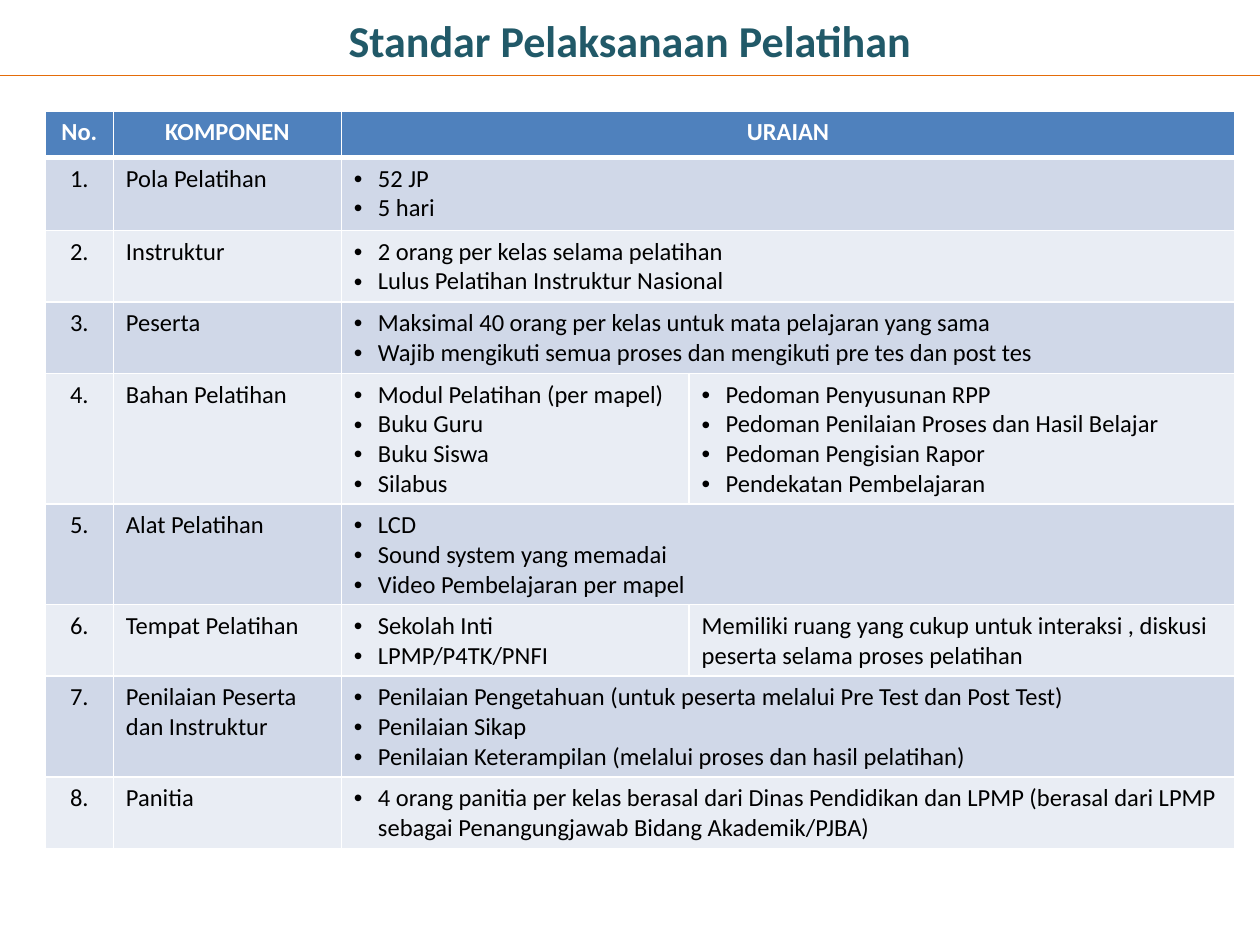
from typing import NamedTuple

from lxml import etree
from pptx import Presentation
from pptx import util as u
from pptx.dml.color import RGBColor
from pptx.enum import shapes, text
from pptx.oxml import ns

FONT = "Calibri"
HUES = {
    "title": "215968", "rule": "E46C0A", "head": "4F81BD", "odd": "D0D8E8",
    "even": "E9EDF4", "white": "FFFFFF", "black": "000000",
}
COLS = [0.54, 1.81, 2.76, 4.33]
HEAD_H = 0.37


class Row(NamedTuple):
    name: str
    high: float
    items: list[str]
    extra: list[str] | str | None = None  # second detail column; None merges it


ROWS = [
    Row("Pola Pelatihan", 0.58, ["52 JP", "5 hari"]),
    Row("Instruktur", 0.47, ["2 orang per kelas selama pelatihan",
                             "Lulus Pelatihan Instruktur Nasional"]),
    Row("Peserta", 0.54,
        ["Maksimal 40 orang per kelas untuk mata pelajaran yang sama",
         "Wajib mengikuti semua proses dan mengikuti pre tes dan post tes"]),
    Row("Bahan Pelatihan", 0.9,
        ["Modul Pelatihan (per mapel)", "Buku Guru", "Buku Siswa", "Silabus"],
        ["Pedoman Penyusunan RPP", "Pedoman Penilaian Proses dan Hasil Belajar",
         "Pedoman Pengisian Rapor", "Pendekatan Pembelajaran"]),
    Row("Alat Pelatihan", 0.78, ["LCD", "Sound system yang memadai",
                                 "Video Pembelajaran per mapel"]),
    Row("Tempat Pelatihan", 0.53, ["Sekolah Inti", "LPMP/P4TK/PNFI"],
        "Memiliki ruang yang cukup untuk interaksi , diskusi "
        "peserta selama proses pelatihan"),
    Row("Penilaian Peserta dan Instruktur", 0.79,
        ["Penilaian Pengetahuan (untuk peserta melalui Pre Test dan Post Test)",
         "Penilaian Sikap",
         "Penilaian Keterampilan (melalui proses dan hasil pelatihan)"]),
    Row("Panitia", 0.54,
        ["4 orang panitia per kelas berasal dari Dinas Pendidikan dan LPMP "
         "(berasal dari LPMP sebagai Penangungjawab Bidang Akademik/PJBA)"]),
]


def rgb(hue: str) -> RGBColor:
    return RGBColor.from_string(HUES[hue])


def write(frame, words: str, size: float, hue: str, bold: bool, mid: bool) -> None:
    frame.text = words
    for para in frame.paragraphs:
        para.alignment = text.PP_ALIGN.CENTER if mid else text.PP_ALIGN.LEFT
        for run in para.runs:
            font = run.font
            font.name, font.size, font.bold = FONT, u.Pt(size), bold
            font.color.rgb = rgb(hue)


def bullet(para) -> None:
    props = para._p.get_or_add_pPr()
    props.set("marL", str(u.Inches(0.19)))
    props.set("indent", str(-u.Inches(0.19)))
    mark = etree.SubElement(props, ns.qn("a:buFont"))
    mark.set("typeface", "Arial")
    etree.SubElement(props, ns.qn("a:buChar")).set("char", "•")


def border(cell, top: float, base: float) -> None:
    props = cell._tc.get_or_add_tcPr()
    for side, wide in (("L", 1), ("R", 1), ("T", top), ("B", base)):
        line = etree.SubElement(props, ns.qn(f"a:ln{side}"), w=str(u.Pt(wide)))
        fill = etree.SubElement(line, ns.qn("a:solidFill"))
        etree.SubElement(fill, ns.qn("a:srgbClr"), val=HUES["white"])


def fill_cell(cell, words: list[str] | str, head: bool = False,
              mid: bool = False) -> None:
    listed = isinstance(words, list)
    write(cell.text_frame, "\n".join(words) if listed else words, 14,
          "white" if head else "black", head, mid)
    if listed:
        for para in cell.text_frame.paragraphs:
            bullet(para)


def add_title(slide) -> None:
    box = slide.shapes.add_textbox(
        u.Inches(0), u.Inches(0.05), u.Inches(10), u.Inches(0.54))
    frame = box.text_frame
    frame.word_wrap = True
    frame.vertical_anchor = text.MSO_ANCHOR.MIDDLE
    write(frame, "Standar Pelaksanaan Pelatihan", 25.2, "title", True, True)


def add_rule(slide) -> None:
    rule = slide.shapes.add_connector(
        shapes.MSO_CONNECTOR.STRAIGHT,
        u.Inches(0), u.Inches(0.6), u.Inches(10), u.Inches(0.6))
    rule.line.color.rgb = rgb("rule")
    rule.line.width = u.Pt(0.75)
    etree.SubElement(rule._element.spPr, ns.qn("a:effectLst"))


def add_grid(slide) -> None:
    highs = [HEAD_H] + [row.high for row in ROWS]
    grid = slide.shapes.add_table(
        len(highs), len(COLS), u.Inches(0.36), u.Inches(0.88),
        u.Inches(sum(COLS)), u.Inches(sum(highs))).table
    grid.horz_banding = False
    for col, wide in zip(grid.columns, COLS):
        col.width = u.Inches(wide)
    for line, high in zip(grid.rows, highs):
        line.height = u.Inches(high)

    # Fills and borders
    for y in range(len(highs)):
        hue = "head" if y == 0 else "odd" if y % 2 else "even"
        for x in range(len(COLS)):
            cell = grid.cell(y, x)
            border(cell, 3 if y == 1 else 1, 3 if y == 0 else 1)
            cell.fill.solid()
            cell.fill.fore_color.rgb = rgb(hue)

    # Heading row
    grid.cell(0, 2).merge(grid.cell(0, 3))
    for x, words in enumerate(["No.", "KOMPONEN", "URAIAN"]):
        fill_cell(grid.cell(0, x), words, head=True, mid=True)

    # Numbered rows
    for y, row in enumerate(ROWS, 1):
        fill_cell(grid.cell(y, 0), f"{y}.", mid=True)
        fill_cell(grid.cell(y, 1), row.name)
        fill_cell(grid.cell(y, 2), row.items)
        if row.extra is None:
            grid.cell(y, 2).merge(grid.cell(y, 3))
        else:
            fill_cell(grid.cell(y, 3), row.extra)


def main() -> None:
    deck = Presentation()
    deck.slide_width, deck.slide_height = u.Inches(10), u.Inches(7.5)
    slide = deck.slides.add_slide(deck.slide_layouts[6])
    add_title(slide)
    add_rule(slide)
    add_grid(slide)
    deck.save("out.pptx")


if __name__ == "__main__":
    main()
